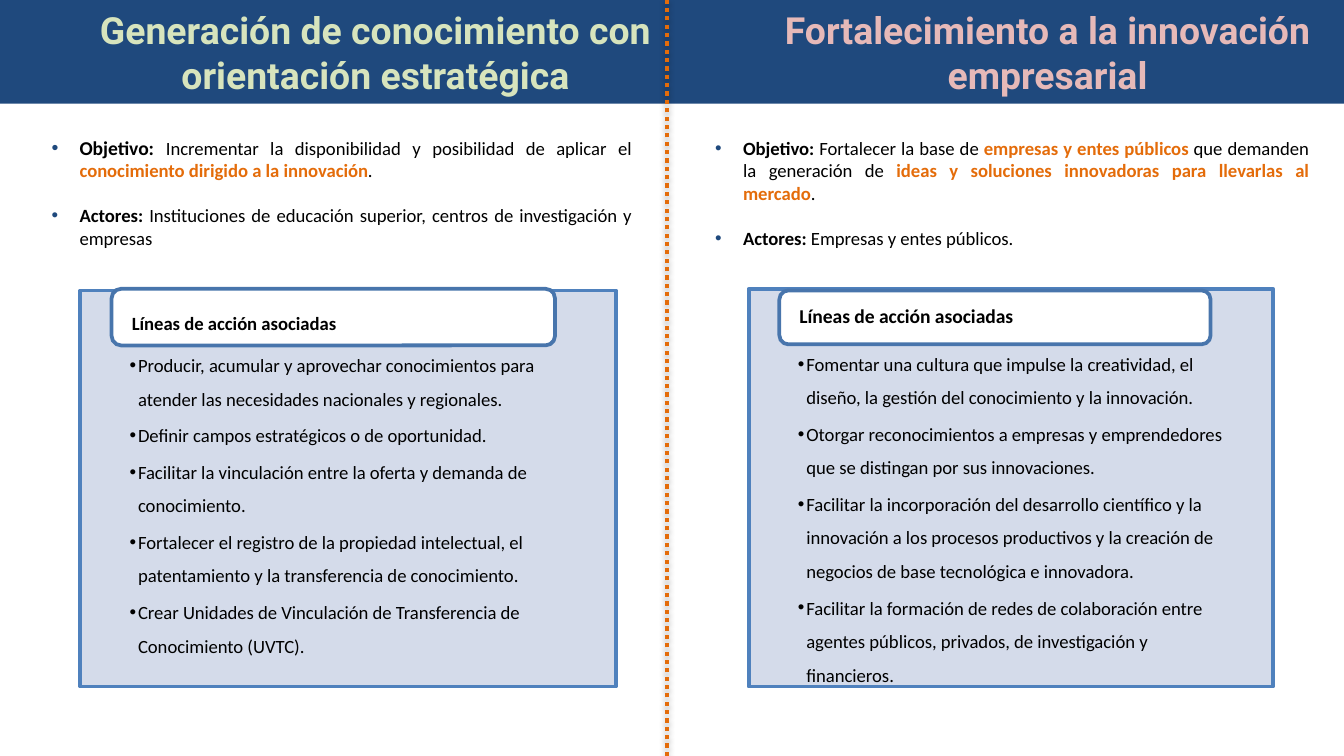
from dataclasses import dataclass

from lxml.etree import SubElement
from pptx import Presentation
from pptx.dml.color import RGBColor
from pptx.enum.dml import MSO_LINE
from pptx.enum.shapes import MSO_CONNECTOR, MSO_SHAPE
from pptx.enum.text import MSO_ANCHOR, MSO_AUTO_SIZE, PP_ALIGN
from pptx.oxml import parse_xml
from pptx.oxml.ns import nsdecls, qn
from pptx.util import Cm, Pt


@dataclass(frozen=True)
class Theme:
    navy: str = "1F497D"
    green: str = "D7E4BD"
    pink: str = "E6B9B8"
    orange: str = "E46C0A"
    black: str = "000000"
    white: str = "FFFFFF"
    panel: str = "D0D8E8"
    panel_edge: str = "4F81BD"
    label_edge: str = "4875AC"
    heading_font: str = "Roboto"
    body_font: str = "Calibri"
    heading: float = 20
    large: float = 10.5
    body: float = 10


theme = Theme()


def add_run(paragraph, text, size, color=theme.black, bold=False, font=theme.body_font):
    run = paragraph.add_run()
    run.text = text
    run.font.name = font
    run.font.size = Pt(size)
    run.font.bold = bold
    run.font.color.rgb = RGBColor.from_string(color)


def set_indent(paragraph, left, hanging=0, bullet_color=None):
    """Set the left indent; a bullet colour also adds a round bullet."""
    properties = paragraph._p.get_or_add_pPr()
    properties.set("marL", str(Cm(left)))
    properties.set("indent", str(-Cm(hanging)))
    if bullet_color:
        color = SubElement(properties, qn("a:buClr"))
        SubElement(color, qn("a:srgbClr"), val=bullet_color)
        SubElement(properties, qn("a:buFont"), typeface="Arial")
        SubElement(properties, qn("a:buChar"), char="•")


# Boxes are left, top, width, height in cm; runs are text, size, colour, bold.
columns = [
    {
        "heading": "Generación de conocimiento con orientación estratégica",
        "heading_color": theme.green,
        "heading_idx": 0,
        "summary_idx": 2,
        "summary_box": (0.46, 2.44, 11.73, 2.49),
        "summary": [
            [
                ("Objetivo: ", theme.large, theme.black, True),
                ("Incrementar la disponibilidad y posibilidad de aplicar el ", theme.body),
                ("conocimiento dirigido a la innovación", theme.body, theme.orange, True),
                (".", theme.body),
            ],
            [
                ("Actores:", theme.body, theme.black, True),
                (" Instituciones de educación superior, centros de investigación y empresas", theme.body),
            ],
        ],
        "panel_box": (1.52, 5.49, 10.12, 7.49),
        "label_box": (2.11, 5.46, 8.38, 1.07),
        "label_size": theme.body,
        "label_spacing": 1.5,
        "actions": [
            "Producir, acumular y aprovechar conocimientos para atender las necesidades nacionales y regionales.",
            "Definir campos estratégicos o de oportunidad.",
            "Facilitar la vinculación entre la oferta y demanda de conocimiento.",
            "Fortalecer el registro de la propiedad intelectual, el patentamiento y la transferencia de conocimiento.",
            "Crear Unidades de Vinculación de Transferencia de Conocimiento (UVTC).",
        ],
    },
    {
        "heading": "Fortalecimiento a la innovación empresarial",
        "heading_color": theme.pink,
        "heading_idx": 1,
        "summary_idx": 4,
        "summary_box": (13, 2.46, 11.99, 2.82),
        "summary": [
            [
                ("Objetivo: ", theme.body, theme.black, True),
                ("Fortalecer la base de ", theme.body),
                ("empresas y entes públicos ", theme.body, theme.orange, True),
                ("que demanden la generación de ", theme.body),
                ("ideas y soluciones innovadoras para llevarlas al mercado", theme.body, theme.orange, True),
                (".", theme.body),
            ],
            [
                ("Actores: ", theme.body, theme.black, True),
                ("Empresas y entes públicos.", theme.body),
            ],
        ],
        "panel_box": (14.15, 5.46, 9.91, 7.52),
        "label_box": (14.73, 5.49, 8.15, 1.02),
        "label_size": theme.large,
        "label_spacing": 0.9,
        "actions": [
            "Fomentar una cultura que impulse la creatividad, el diseño, la gestión del conocimiento y la innovación.",
            "Otorgar reconocimientos a empresas y emprendedores que se distingan por sus innovaciones.",
            "Facilitar la incorporación del desarrollo científico y la innovación a los procesos productivos "
            "y la creación de negocios de base tecnológica e innovadora.",
            "Facilitar la formación de redes de colaboración entre agentes públicos, privados, de investigación "
            "y financieros.",
        ],
    },
]

presentation = Presentation()
presentation.slide_width = Cm(25.4)
presentation.slide_height = Cm(14.29)
slide = presentation.slides.add_slide(presentation.slide_layouts.get_by_name("Comparison"))
placeholders = {holder.placeholder_format.idx: holder for holder in slide.placeholders}

for number, column in enumerate(columns):
    # Heading band
    heading = placeholders[column["heading_idx"]]
    heading.left, heading.top = Cm(12.7 * number), Cm(0)
    heading.width, heading.height = Cm(12.7), Cm(1.96)
    heading.fill.solid()
    heading.fill.fore_color.rgb = RGBColor.from_string(theme.navy)
    frame = heading.text_frame
    frame.auto_size = MSO_AUTO_SIZE.NONE
    frame.vertical_anchor = MSO_ANCHOR.MIDDLE
    paragraph = frame.paragraphs[0]
    paragraph.alignment = PP_ALIGN.CENTER
    paragraph.space_before = Pt(0)
    set_indent(paragraph, 1.5)
    add_run(paragraph, column["heading"], theme.heading, column["heading_color"], True, theme.heading_font)

    # Objective and actors
    summary = placeholders[column["summary_idx"]]
    summary.left, summary.top, summary.width, summary.height = map(Cm, column["summary_box"])
    frame = summary.text_frame
    frame.auto_size = MSO_AUTO_SIZE.NONE
    for row, runs in enumerate(column["summary"]):
        paragraph = frame.add_paragraph() if row else frame.paragraphs[0]
        paragraph.alignment = PP_ALIGN.JUSTIFY
        paragraph.space_before = Pt(12 * row)
        set_indent(paragraph, 0.79, 0.53, theme.navy)
        for run in runs:
            add_run(paragraph, *run)

    # Lines of action
    group = slide.shapes.add_group_shape()
    panel = group.shapes.add_shape(MSO_SHAPE.RECTANGLE, *map(Cm, column["panel_box"]))
    label = group.shapes.add_shape(MSO_SHAPE.ROUNDED_RECTANGLE, *map(Cm, column["label_box"]))
    for box, fill, edge in ((panel, theme.panel, theme.panel_edge), (label, theme.white, theme.label_edge)):
        box.shadow.inherit = False
        box.fill.solid()
        box.fill.fore_color.rgb = RGBColor.from_string(fill)
        box.line.color.rgb = RGBColor.from_string(edge)
        box.line.width = Pt(2)
        box.text_frame.word_wrap = True
    panel_color = panel.fill._xPr.find(qn("a:solidFill")).find(qn("a:srgbClr"))
    SubElement(panel_color, qn("a:alpha"), val="90000")

    frame = panel.text_frame
    frame.vertical_anchor = MSO_ANCHOR.TOP
    frame.margin_left = frame.margin_right = Cm(0.93)
    frame.margin_top, frame.margin_bottom = Cm(0.99), Cm(0.2)
    for row, action in enumerate(column["actions"]):
        paragraph = frame.add_paragraph() if row else frame.paragraphs[0]
        paragraph.alignment = PP_ALIGN.LEFT
        paragraph.line_spacing = 1.5
        paragraph.space_after = Pt(1.5)
        set_indent(paragraph, 0.16, 0.16, theme.black)
        add_run(paragraph, action, theme.body)

    frame = label.text_frame
    frame.vertical_anchor = MSO_ANCHOR.MIDDLE
    frame.margin_left = frame.margin_right = Cm(0.33)
    frame.margin_top = frame.margin_bottom = Cm(0.03)
    paragraph = frame.paragraphs[0]
    paragraph.alignment = PP_ALIGN.LEFT
    paragraph.line_spacing = column["label_spacing"]
    paragraph.space_after = Pt(3.5)
    add_run(paragraph, "Líneas de acción asociadas", column["label_size"], bold=True)

unused = placeholders[3].element
unused.getparent().remove(unused)

divider = slide.shapes.add_connector(MSO_CONNECTOR.STRAIGHT, Cm(12.6), Cm(14.29), Cm(12.6), Cm(0))
divider.line.color.rgb = RGBColor.from_string(theme.orange)
divider.line.width = Pt(2.25)
divider.line.dash_style = MSO_LINE.ROUND_DOT
divider.element.spPr.append(parse_xml(
    f'<a:effectLst {nsdecls("a")}><a:outerShdw blurRad="{Pt(3.1)}" dist="{Pt(1.8)}" dir="5400000" '
    f'rotWithShape="0"><a:srgbClr val="{theme.black}"><a:alpha val="35000"/></a:srgbClr>'
    '</a:outerShdw></a:effectLst>'
))

presentation.save("out.pptx")
